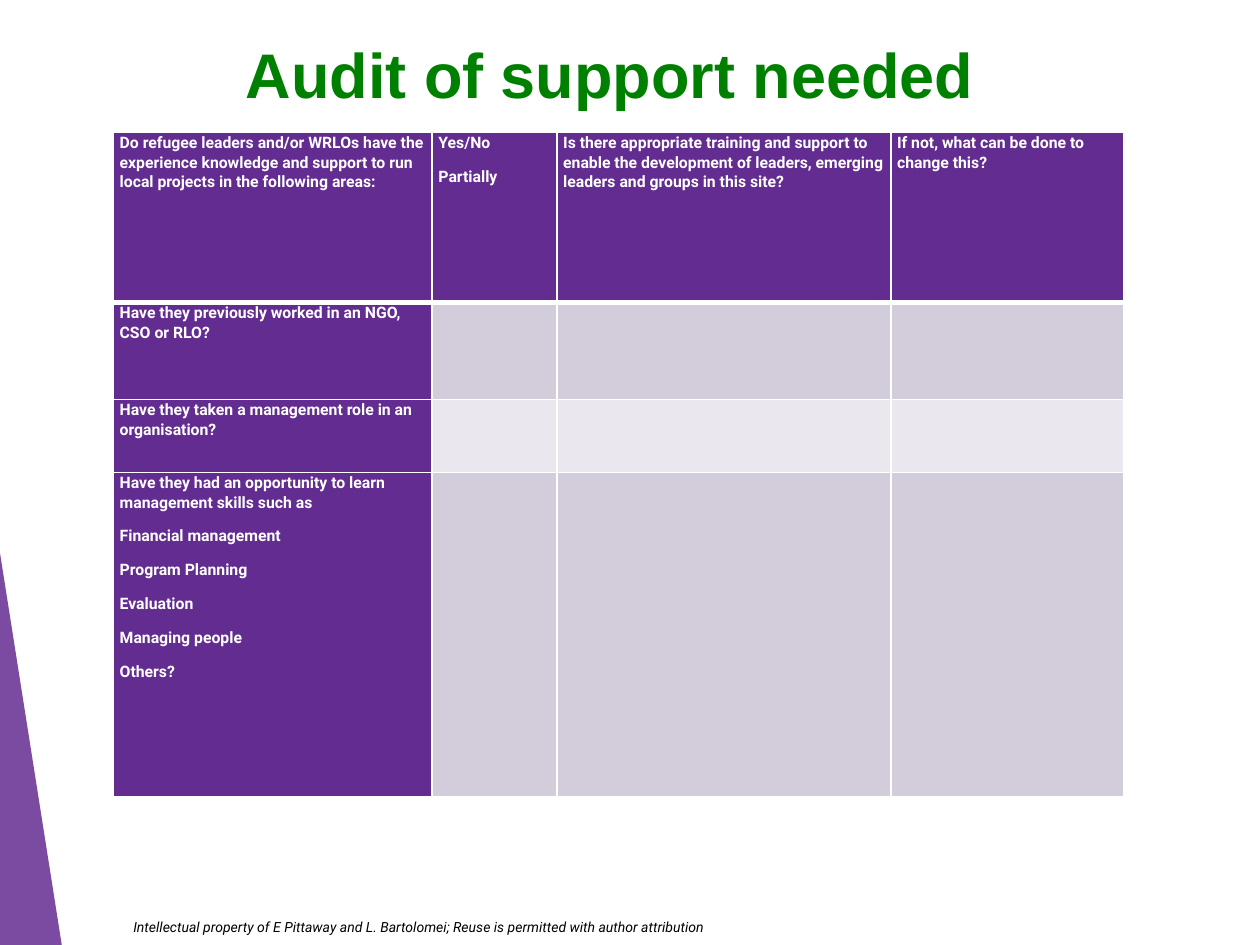
from dataclasses import dataclass

import lxml.etree
import pptx
import pptx.dml.color
import pptx.enum.text
import pptx.oxml.ns
import pptx.util

COLORS = {
    "purple": "632C90",
    "green": "008000",
    "band_dark": "D3CDDB",
    "band_light": "EAE8EE",
    "white": "FFFFFF",
    "black": "000000",
}
SLIDE_WIDTH = pptx.util.Inches(10)
SLIDE_HEIGHT = pptx.util.Inches(7.5)

# Table columns and rows as percentages of the slide's width and height.
COLUMN_WIDTHS = (25.3, 9.9, 26.5, 18.5)
HEADINGS = (
    ("Do refugee leaders and/or WRLOs have the experience knowledge and support "
     "to run local projects in the following areas:",),
    ("Yes/No", "Partially"),
    ("Is there appropriate training and support to enable the development of "
     "leaders, emerging leaders and groups in this site?",),
    ("If not, what can be done to change this?",),
)


@dataclass(frozen=True)
class AuditRow:
    height: float
    texts: tuple[tuple[str, ...], ...]
    band: str
    bottom_border: float = 1


@dataclass(frozen=True)
class Caption:
    text: str
    left: float
    top: float
    width: float
    height: float
    size: float
    font: str
    color: str
    bold: bool = False
    italic: bool = False
    centered: bool = False
    top_inset: float = 0.05


AUDIT_ROWS = (
    AuditRow(18, HEADINGS, "purple", bottom_border=3),
    AuditRow(10.27, (("Have they previously worked in an NGO, CSO or RLO?",),), "band_dark"),
    AuditRow(7.73, (("Have they taken a management role in an organisation?",),), "band_light"),
    AuditRow(34.27, ((
        "Have they had an opportunity to learn management skills such as",
        "Financial management",
        "Program Planning",
        "Evaluation",
        "Managing people",
        "Others?",
    ),), "band_dark"),
)
CAPTIONS = (
    Caption("Intellectual property of E Pittaway and L. Bartolomei; "
            "Reuse is permitted with author attribution",
            9.6, 96.53, 58, 3.07, 8, "Roboto", "black", italic=True),
    Caption("Audit of support needed", 5.8, 2.4, 85.2, 95.07, 36, "Arial", "green",
            bold=True, centered=True, top_inset=0.1),
)


def across(percent: float) -> int:
    return round(SLIDE_WIDTH * percent / 100)


def down(percent: float) -> int:
    return round(SLIDE_HEIGHT * percent / 100)


def rgb(name: str) -> pptx.dml.color.RGBColor:
    return pptx.dml.color.RGBColor.from_string(COLORS[name])


def add_run(paragraph, text: str, size: float, font: str, color: str,
            bold: bool = False, italic: bool = False) -> None:
    run = paragraph.add_run()
    run.text = text
    run.font.size = pptx.util.Pt(size)
    run.font.name = font
    run.font.color.rgb = rgb(color)
    run.font.bold = bold
    run.font.italic = italic


def add_caption(slide, caption: Caption) -> None:
    box = slide.shapes.add_textbox(across(caption.left), down(caption.top),
                                   across(caption.width), down(caption.height))
    frame = box.text_frame
    frame.word_wrap = True
    frame.margin_top = pptx.util.Inches(caption.top_inset)
    paragraph = frame.paragraphs[0]
    if caption.centered:
        paragraph.alignment = pptx.enum.text.PP_ALIGN.CENTER
    add_run(paragraph, caption.text, caption.size, caption.font, caption.color,
            caption.bold, caption.italic)


def add_wedge(slide) -> None:
    """Draw the translucent triangle in the bottom left corner."""
    builder = slide.shapes.build_freeform(0, down(58.53))
    builder.add_line_segments([(across(4.9), SLIDE_HEIGHT), (0, SLIDE_HEIGHT)], close=True)
    wedge = builder.convert_to_shape()
    wedge.shadow.inherit = False
    wedge.line.fill.background()
    wedge.fill.solid()
    wedge.fill.fore_color.rgb = rgb("purple")
    tint = wedge.fill._xPr.find(".//" + pptx.oxml.ns.qn("a:srgbClr"))
    lxml.etree.SubElement(tint, pptx.oxml.ns.qn("a:alpha"), val="85000")


def add_borders(cell, bottom: float) -> None:
    properties = cell._tc.get_or_add_tcPr()
    widths = {"lnL": 1, "lnR": 1, "lnT": 1, "lnB": bottom}
    for position, (side, width) in enumerate(widths.items()):
        border = lxml.etree.Element(pptx.oxml.ns.qn(f"a:{side}"),
                                    w=str(pptx.util.Pt(width)))
        fill = lxml.etree.SubElement(border, pptx.oxml.ns.qn("a:solidFill"))
        lxml.etree.SubElement(fill, pptx.oxml.ns.qn("a:srgbClr"), val=COLORS["white"])
        properties.insert(position, border)


def fill_cell(cell, texts: tuple[str, ...], color: str, bottom_border: float) -> None:
    cell.fill.solid()
    cell.fill.fore_color.rgb = rgb(color)
    add_borders(cell, bottom_border)
    cell.margin_left = cell.margin_right = pptx.util.Inches(0.05)
    cell.margin_top = cell.margin_bottom = 0
    frame = cell.text_frame
    for index, text in enumerate(texts):
        paragraph = frame.add_paragraph() if index else frame.paragraphs[0]
        paragraph.line_spacing = 1.07
        paragraph.space_after = pptx.util.Pt(8)
        add_run(paragraph, text, 9, "Roboto", "white", bold=True)


def add_audit_table(slide) -> None:
    table = slide.shapes.add_table(
        len(AUDIT_ROWS), len(COLUMN_WIDTHS), across(9), down(14),
        across(sum(COLUMN_WIDTHS)), down(sum(row.height for row in AUDIT_ROWS))).table
    for column, width in zip(table.columns, COLUMN_WIDTHS):
        column.width = across(width)
    for row_index, row in enumerate(AUDIT_ROWS):
        table.rows[row_index].height = down(row.height)
        for column_index in range(len(COLUMN_WIDTHS)):
            texts = row.texts[column_index] if column_index < len(row.texts) else ()
            fill_cell(table.cell(row_index, column_index), texts,
                      row.band if column_index else "purple", row.bottom_border)


def main() -> None:
    deck = pptx.Presentation()
    deck.slide_width = SLIDE_WIDTH
    deck.slide_height = SLIDE_HEIGHT
    slide = deck.slides.add_slide(deck.slide_layouts[6])
    add_wedge(slide)
    for caption in CAPTIONS:
        add_caption(slide, caption)
    add_audit_table(slide)
    deck.save("out.pptx")


if __name__ == "__main__":
    main()
